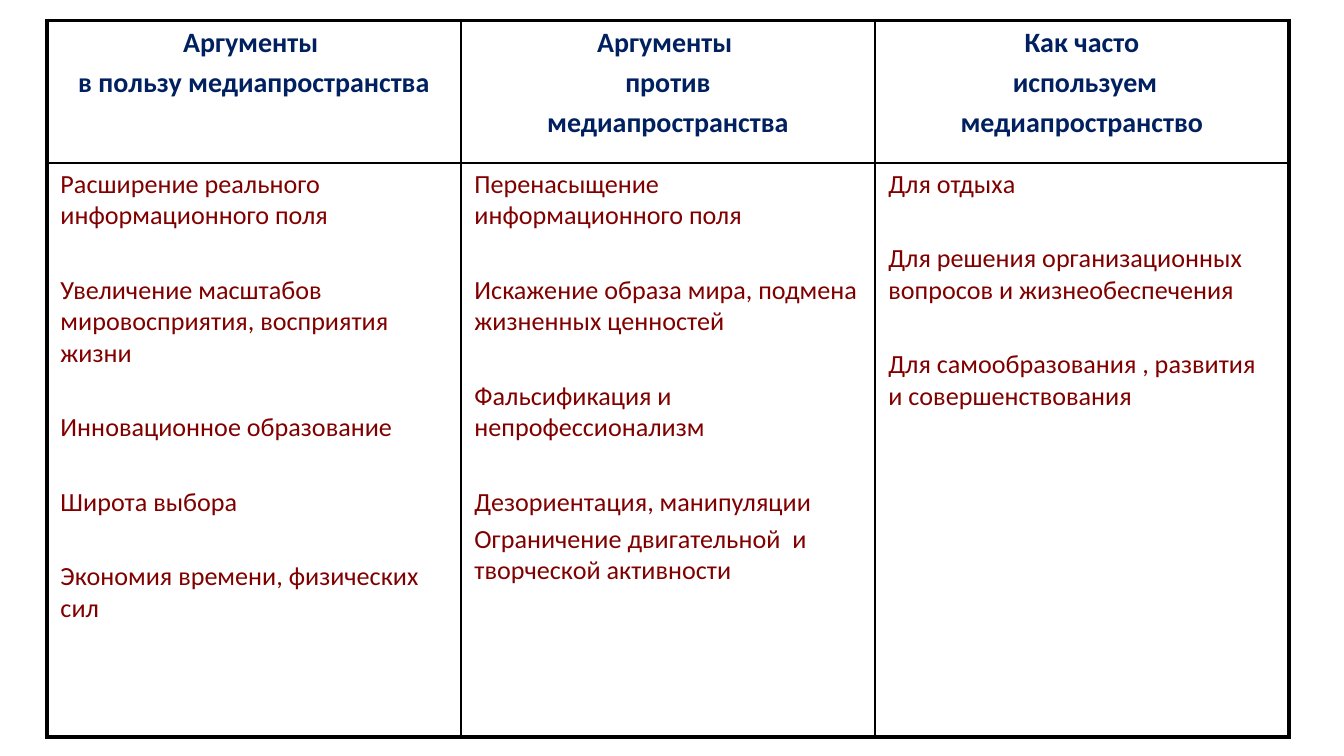
"""Builds a slide with a table of arguments about the media space."""
from dataclasses import dataclass

from lxml import etree
from pptx import Presentation
from pptx import util as u
from pptx.dml import color
from pptx.enum import text
from pptx.oxml import ns

WIDE = 10
HIGH = WIDE * 9 / 16
LEFT, TOP = 0.035 * WIDE, 0.027 * HIGH
COL = 0.308 * WIDE
ROWS = (1.06, 4.27)
THICK, THIN = 2.25, 1
INK, NAVY, MAROON = "000000", "002060", "800000"


@dataclass
class Style:
    size: float
    hue: str
    bold: bool
    align: text.PP_ALIGN
    gap: float


@dataclass
class Column:
    head: list[str]
    items: list[str]
    tight: int = 0


HEAD = Style(15, NAVY, True, text.PP_ALIGN.CENTER, 3)
BODY = Style(14, MAROON, False, text.PP_ALIGN.LEFT, 22.7)
TIGHT = 2.8

COLUMNS = [
    Column(
        ["Аргументы ", "в пользу медиапространства"],
        ["Расширение реального информационного поля",
         "Увеличение масштабов мировосприятия, восприятия жизни",
         "Инновационное образование",
         "Широта выбора",
         "Экономия времени, физических сил"],
    ),
    Column(
        ["Аргументы ", "против", "медиапространства"],
        ["Перенасыщение информационного поля",
         "Искажение образа мира, подмена жизненных ценностей",
         "Фальсификация и непрофессионализм",
         "Дезориентация, манипуляции",
         "Ограничение двигательной  и творческой активности"],
        tight=4,
    ),
    Column(
        ["Как часто", " используем", "медиапространство"],
        ["Для отдыха",
         "Для решения организационных вопросов и жизнеобеспечения",
         "Для самообразования , развития и совершенствования"],
    ),
]


def paint(font, hue: str) -> None:
    font.color.rgb = color.RGBColor.from_string(hue)


def write(cell, lines: list[str], style: Style, tight: int = 0) -> None:
    frame = cell.text_frame
    frame.text = "\n".join(lines)
    for i, para in enumerate(frame.paragraphs):
        para.alignment = style.align
        if i:
            para.space_before = u.Pt(TIGHT if i == tight else style.gap)
        for run in para.runs:
            run.font.name = "Calibri"
            run.font.size = u.Pt(style.size)
            run.font.bold = style.bold
            paint(run.font, style.hue)


def edge(cell, row: int, col: int) -> None:
    cell.fill.background()
    props = cell._tc.get_or_add_tcPr()
    outer = {"L": col == 0, "R": col == len(COLUMNS) - 1,
             "T": row == 0, "B": row == len(ROWS) - 1}
    for i, (side, rim) in enumerate(outer.items()):
        line = etree.Element(ns.qn(f"a:ln{side}"))
        line.set("w", str(u.Pt(THICK if rim else THIN)))
        solid = etree.SubElement(line, ns.qn("a:solidFill"))
        etree.SubElement(solid, ns.qn("a:srgbClr")).set("val", INK)
        props.insert(i, line)


def fill(cell, row: int, col: int) -> None:
    cell.margin_left = cell.margin_right = u.Inches(0.1)
    cell.margin_top = cell.margin_bottom = u.Inches(0.04)
    data = COLUMNS[col]
    if row:
        write(cell, data.items, BODY, data.tight)
    else:
        write(cell, data.head, HEAD)
    edge(cell, row, col)


def main() -> None:
    deck = Presentation()
    deck.slide_width, deck.slide_height = u.Inches(WIDE), u.Inches(HIGH)
    slide = deck.slides.add_slide(deck.slide_layouts[6])
    box = [u.Inches(n) for n in (LEFT, TOP, COL * len(COLUMNS), sum(ROWS))]
    table = slide.shapes.add_table(len(ROWS), len(COLUMNS), *box).table
    table.first_row = table.horz_banding = False
    for col in table.columns:
        col.width = u.Inches(COL)
    for row, high in enumerate(ROWS):
        table.rows[row].height = u.Inches(high)
        for col in range(len(COLUMNS)):
            fill(table.cell(row, col), row, col)
    deck.save("out.pptx")


if __name__ == "__main__":
    main()
